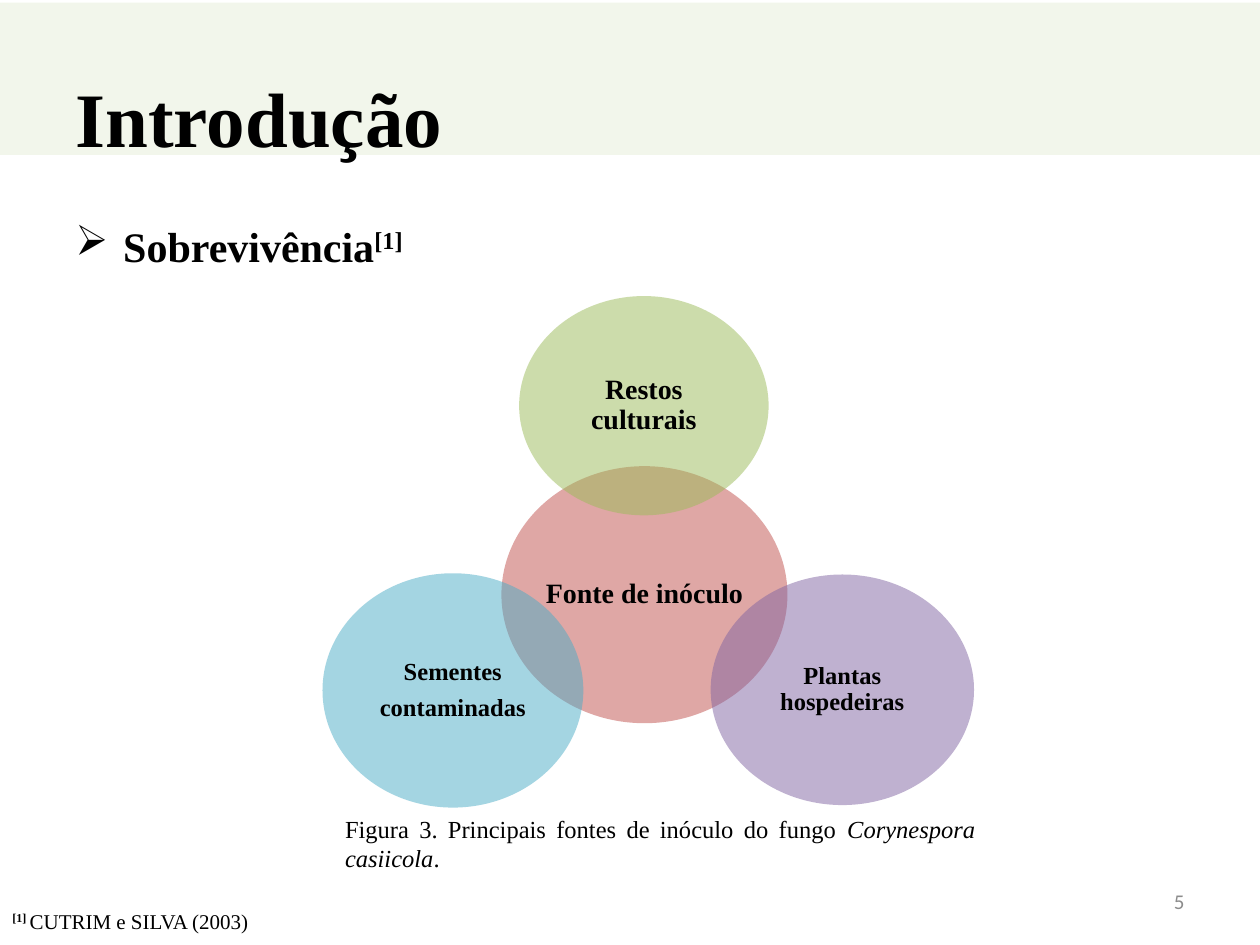
from lxml.etree import SubElement
from pptx import Presentation
from pptx.dml.color import RGBColor
from pptx.enum.shapes import MSO_SHAPE as Shape
from pptx.enum.text import MSO_ANCHOR as Anchor, PP_ALIGN as Align
from pptx.oxml.ns import qn
from pptx.util import Emu, Pt

PX = 9144  # 100 px to the inch
SERIF, SANS = "Times New Roman", "Calibri"
BLACK = RGBColor(0x00, 0x00, 0x00)
GRAY = RGBColor(0x8C, 0x8C, 0x8C)
BAND = RGBColor(0xD7, 0xE4, 0xBD)
RED = RGBColor(0xC0, 0x50, 0x4D)
GREEN = RGBColor(0x9B, 0xBB, 0x59)
PURPLE = RGBColor(0x80, 0x64, 0xA2)
BLUE = RGBColor(0x4B, 0xAC, 0xC6)


def emu(*lengths):
    return [Emu(length * PX) for length in lengths]


def style(run, size, bold=False, italic=False, color=BLACK, face=SERIF):
    font = run.font
    font.name, font.size, font.bold, font.italic = face, Pt(size), bold, italic
    font.color.rgb = color


def superscript(run):
    run.font._element.set("baseline", "30000")


def add_runs(paragraph, *texts):
    for text in texts:
        paragraph.add_run().text = text
    return paragraph.runs


def add_tinted(slide, kind, box, color, opacity):
    """Add a borderless shape with a see-through fill; opacity is in percent."""
    shape = slide.shapes.add_shape(kind, *emu(*box))
    shape.shadow.inherit = False
    shape.fill.solid()
    shape.fill.fore_color.rgb = color
    shape.line.fill.background()
    tint = shape.fill._xPr.find(".//" + qn("a:srgbClr"))
    SubElement(tint, qn("a:alpha")).set("val", str(opacity * 1000))
    return shape


def add_text(slide, box):
    frame = slide.shapes.add_textbox(*emu(*box)).text_frame
    frame.word_wrap = True
    return frame


def add_header(slide, box):
    left, top, width, height = box
    band = add_tinted(slide, Shape.RECTANGLE, box, BAND, 30)
    title = slide.shapes.title
    title._element.addprevious(band._element)
    title.left, title.top, title.width, title.height = emu(
        left + 50, top + 28, width - 100, height + 4)
    title.text_frame.text = "Introdução"
    title.text_frame.vertical_anchor = Anchor.MIDDLE
    heading = title.text_frame.paragraphs[0]
    heading.alignment = Align.LEFT
    style(heading.runs[0], 44, bold=True)


def add_topic(slide, box):
    paragraph = add_text(slide, box).paragraphs[0]
    properties = paragraph._p.get_or_add_pPr()
    indent = 38 * PX
    properties.set("marL", str(indent))
    properties.set("indent", str(-indent))
    SubElement(properties, qn("a:buChar")).set("char", "➢")
    topic, mark = add_runs(paragraph, "Sobrevivência", "[1]")
    style(topic, 24, bold=True)
    style(mark, 24, bold=True)
    superscript(mark)


def add_circle(slide, box, color, label, size):
    frame = add_tinted(slide, Shape.OVAL, box, color, 50).text_frame
    frame.word_wrap = True
    frame.vertical_anchor = Anchor.MIDDLE
    frame.margin_left, frame.margin_top, frame.margin_right, frame.margin_bottom = emu(1, 1, 1, 1)
    frame.text = label
    for paragraph in frame.paragraphs:
        paragraph.alignment = Align.CENTER
        paragraph.line_spacing = 0.9
        paragraph.space_after = Pt(size * 0.4)
        style(paragraph.runs[0], size, bold=True)


def add_sources_diagram(slide, left, top):
    """Central source with its three overlapping origins."""
    circles = [
        (142, 135, 227, 204, RED, "Fonte de inóculo", 16),
        (156, 0, 198, 174, GREEN, "Restos culturais", 16),
        (308, 221, 209, 183, PURPLE, "Plantas hospedeiras", 14),
        (0, 220, 207, 186, BLUE, "Sementes\ncontaminadas", 14),
    ]
    for x, y, width, height, color, label, size in circles:
        add_circle(slide, (left + x, top + y, width, height), color, label, size)


def add_caption(slide, box):
    paragraph = add_text(slide, box).paragraphs[0]
    paragraph.alignment = Align.JUSTIFY
    lead, species, stop = add_runs(
        paragraph, "Figura 3. Principais fontes de inóculo do fungo ",
        "Corynespora casiicola", ".")
    style(lead, 14)
    style(species, 14, italic=True)
    style(stop, 14)


def add_reference(slide, box):
    mark, citation = add_runs(
        add_text(slide, box).paragraphs[0], "[1] ", "CUTRIM e SILVA (2003)")
    style(mark, 12, bold=True)
    superscript(mark)
    style(citation, 12)


def add_page_number(slide, box):
    frame = add_text(slide, box)
    frame.vertical_anchor = Anchor.MIDDLE
    frame.text = "5"
    frame.paragraphs[0].alignment = Align.RIGHT
    style(frame.paragraphs[0].runs[0], 12, color=GRAY, face=SANS)


def main():
    deck = Presentation()
    deck.slide_width, deck.slide_height = emu(1000, 750)
    slide = deck.slides.add_slide(deck.slide_layouts[5])
    add_header(slide, (0, 2, 1000, 121))
    add_topic(slide, (50, 170, 900, 50))
    add_page_number(slide, (717, 695, 233, 40))
    add_sources_diagram(slide, 256, 235)
    add_reference(slide, (0, 716, 375, 30))
    add_caption(slide, (264, 641, 520, 57))
    deck.save("out.pptx")


if __name__ == "__main__":
    main()
